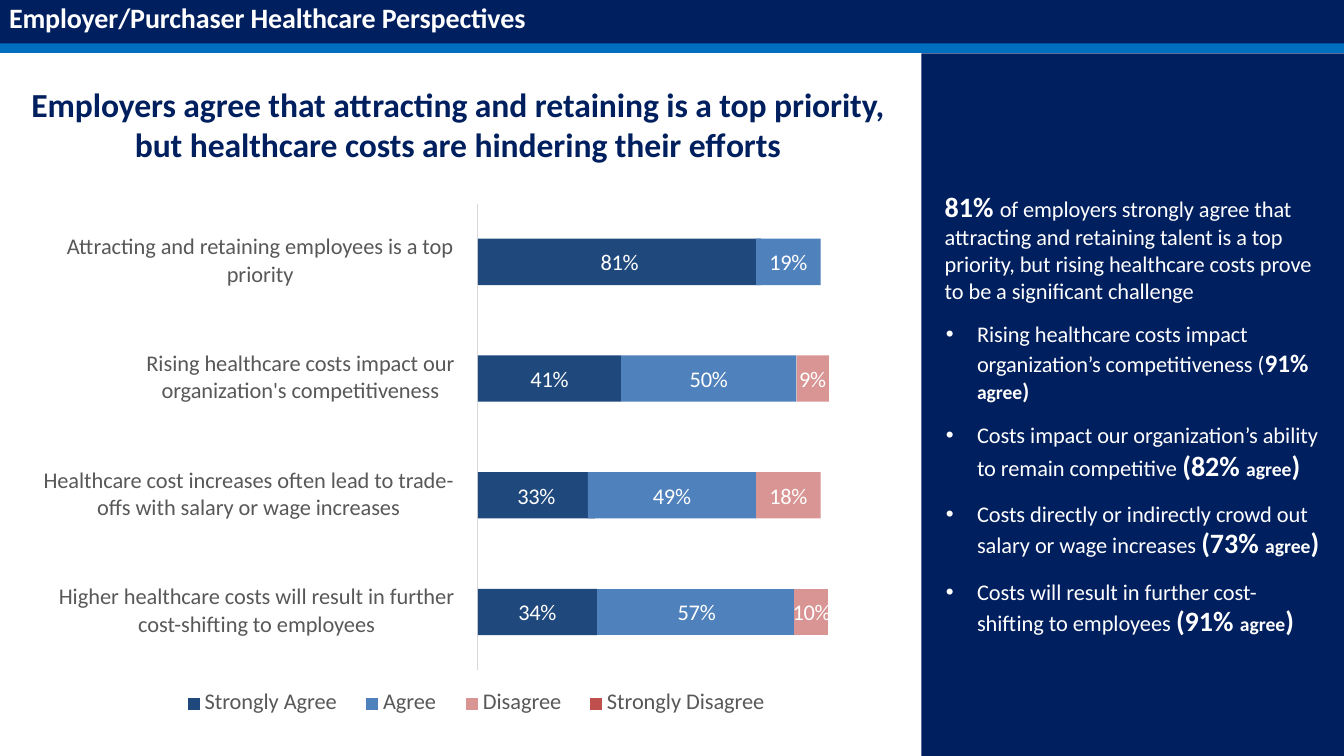
"""Build the slide on employers' views of healthcare costs."""
from lxml import etree
from pptx import Presentation
from pptx.dml.color import RGBColor
from pptx.enum.shapes import MSO_CONNECTOR as Connector
from pptx.enum.shapes import MSO_SHAPE as Preset
from pptx.enum.text import MSO_ANCHOR as Anchor
from pptx.enum.text import PP_ALIGN as Align
from pptx.oxml.ns import qn
from pptx.util import Inches, Pt

FONT = "Calibri"
NAVY = RGBColor(0x00, 0x1F, 0x5F)
BLUE = RGBColor(0x00, 0x6F, 0xC0)
WHITE = RGBColor(0xFF, 0xFF, 0xFF)
GREY = RGBColor(0x58, 0x58, 0x58)
AXIS_GREY = RGBColor(0xD9, 0xD9, 0xD9)
DARK_BLUE = RGBColor(0x1F, 0x48, 0x7C)
MID_BLUE = RGBColor(0x4F, 0x81, 0xBC)
PINK = RGBColor(0xD9, 0x95, 0x93)
RED = RGBColor(0xC0, 0x50, 0x4D)

presentation = Presentation()
presentation.slide_width = Inches(13.33)
presentation.slide_height = Inches(7.5)
slide = presentation.slides.add_slide(presentation.slide_layouts[6])
CELL = presentation.slide_height / 75
COLUMNS, ROWS = 133.3, 75


def add_outline(color, *rectangles):
    """Draw one filled freeform of rectangles, measured in grid cells."""
    builder = None
    for left, top, width, height in rectangles:
        right, bottom = (left + width) * CELL, (top + height) * CELL
        if builder is None:
            builder = slide.shapes.build_freeform(right, top * CELL)
        else:
            builder.move_to(right, top * CELL)
        builder.add_line_segments(
            [(left * CELL, top * CELL), (left * CELL, bottom), (right, bottom)])
    shape = builder.convert_to_shape()
    shape.shadow.inherit = False
    shape.fill.solid()
    shape.fill.fore_color.rgb = color
    shape.line.fill.background()


def add_text(area, paragraphs, color, align=Align.LEFT, spacing=0, wrap=True, fill=None):
    """Add text of (text, size, bold) runs, on a bar when a fill is given."""
    place = [round(n * CELL) for n in area]
    if fill is None:
        shape = slide.shapes.add_textbox(*place)
    else:
        shape = slide.shapes.add_shape(Preset.RECTANGLE, *place)
        shape.shadow.inherit = False
        shape.fill.solid()
        shape.fill.fore_color.rgb = fill
        shape.line.fill.background()
    frame = shape.text_frame
    frame.word_wrap = wrap
    frame.vertical_anchor = Anchor.TOP if fill is None else Anchor.MIDDLE
    frame.margin_left = frame.margin_top = frame.margin_right = frame.margin_bottom = 0
    for index, runs in enumerate(paragraphs):
        paragraph = frame.add_paragraph() if index else frame.paragraphs[0]
        paragraph.alignment = align
        for text, size, bold in runs:
            run = paragraph.add_run()
            run.text = text
            run.font.name = FONT
            run.font.size = Pt(size)
            run.font.bold = bold
            run.font.color.rgb = color
            run.font._element.set("spc", str(spacing))
    return frame.paragraphs


HEADER, STRIPE, PANEL_LEFT = 4.3, 1, 91.4
add_outline(BLUE, (0, HEADER, COLUMNS, STRIPE))
panel_top = HEADER + STRIPE
add_outline(NAVY, (PANEL_LEFT, panel_top, COLUMNS - PANEL_LEFT, ROWS - panel_top),
            (0, 0, COLUMNS, HEADER))

add_text((2.8, 8.3, 85.2, 8.3),
         [[("Employers agree that attracting and retaining is a top priority, "
            "but healthcare costs are hindering their efforts", 24, True)]],
         NAVY, Align.CENTER, -5)
summary = add_text((93.7, 18.8, 37.1, 21.7), [
    [("81% ", 20, True),
     ("of employers strongly agree that attracting and retaining talent is a top "
      "priority, but rising healthcare costs prove to be a significant challenge", 16, False)],
    [("Rising healthcare costs impact organization’s competitiveness (", 16, False),
     ("91% ", 18, True), ("agree", 14, True), (")", 16, True)],
], WHITE, spacing=-6)

findings = [
    ("Costs impact our organization’s ability to remain competitive ", "82%"),
    ("Costs directly or indirectly crowd out salary or wage increases ", "73%"),
    ("Costs will result in further cost-shifting to employees ", "91%"),
]
details = add_text((93.7, 41.8, 37.5, 21.6), [
    [(text, 16, False), (f"({share} ", 20, True), ("agree", 14, True), (")", 20, True)]
    for text, share in findings
], WHITE, spacing=-3)

for paragraph in (summary[1], *details):
    properties = paragraph._p.get_or_add_pPr()
    properties.set("marL", str(Inches(0.32)))
    properties.set("indent", str(-Inches(0.31)))
    etree.SubElement(properties, qn("a:buFont")).set("typeface", "Arial")
    etree.SubElement(properties, qn("a:buChar")).set("char", "•")
summary[1].space_before = Pt(12)
for paragraph in details[1:]:
    paragraph.space_before = Pt(9.7)
    paragraph.line_spacing = Pt(22.9)

add_text((0.9, 0, 61.6, 3.9),
         [[("Employer/Purchaser Healthcare Perspectives", 20, True)]], WHITE, spacing=-10)

AXIS_LEFT, PLOT_TOP, PLOT_HEIGHT = 47.4, 20.2, 46.3
BAR_HEIGHT, TEXT_HEIGHT, LABEL_RIGHT = 4.6, 3, 45.5
answers = [
    ("Strongly Agree", DARK_BLUE, 18.6, 13.5),
    ("Agree", MID_BLUE, 36.3, 5.6),
    ("Disagree", PINK, 46.2, 8.1),
    ("Strongly Disagree", RED, 58.5, 16.1),
]
questions = [
    ("Attracting and retaining employees is a top priority", 6.3,
     [("81%", AXIS_LEFT, 28.1), ("19%", 75, 6.4)]),
    ("Rising healthcare costs impact our organization's competitiveness", 14.3,
     [("41%", AXIS_LEFT, 14.2), ("50%", 61.6, 17.4), ("9%", 79, 3.2)]),
    ("Healthcare cost increases often lead to trade-offs with salary or wage increases", 4,
     [("33%", AXIS_LEFT, 11.6), ("49%", 58.3, 16.7), ("18%", 75, 6.4)]),
    ("Higher healthcare costs will result in further cost-shifting to employees", 5.6,
     [("34%", AXIS_LEFT, 11.8), ("57%", 59.2, 19.7), ("10%", 78.8, 3.3)]),
]

axis = slide.shapes.add_connector(
    Connector.STRAIGHT, *(round(n * CELL) for n in (
        AXIS_LEFT, PLOT_TOP + PLOT_HEIGHT, AXIS_LEFT, PLOT_TOP)))
axis.line.color.rgb = AXIS_GREY
axis.line.width = Pt(0.75)
etree.SubElement(axis._element.spPr, qn("a:effectLst"))

band = PLOT_HEIGHT / len(questions)
for row, (question, left, bars) in enumerate(questions):
    band_top = PLOT_TOP + row * band
    bar_top = band_top + (band - BAR_HEIGHT) / 2
    for (share, bar_left, width), (answer, color, *legend) in zip(bars, answers):
        area = (bar_left, bar_top, width, BAR_HEIGHT)
        label = [[(share, 16, False)]]
        if row == len(questions) - 1 and color != DARK_BLUE:
            add_outline(color, area)
            text_top = bar_top + (BAR_HEIGHT - TEXT_HEIGHT) / 2 + 0.1
            add_text((bar_left + width / 2 - 2, text_top, 4.1, TEXT_HEIGHT),
                     label, WHITE, Align.CENTER, -20, False)
        else:
            add_text(area, label, WHITE, Align.CENTER, -20, False, color)
    question_text = add_text((left - 0.1, band_top + 2.8, LABEL_RIGHT - left, 5.7),
                             [[(question, 16, False)]], GREY, Align.CENTER, -4)
    question_text[0].line_spacing = 1.02

for answer, color, left, width in answers:
    add_outline(color, (left, 69.2, 1.2, 1.2))
    add_text((left + 1.7, 68.2, width, TEXT_HEIGHT), [[(answer, 16, False)]], GREY,
             spacing=-4, wrap=False)

presentation.save("out.pptx")
